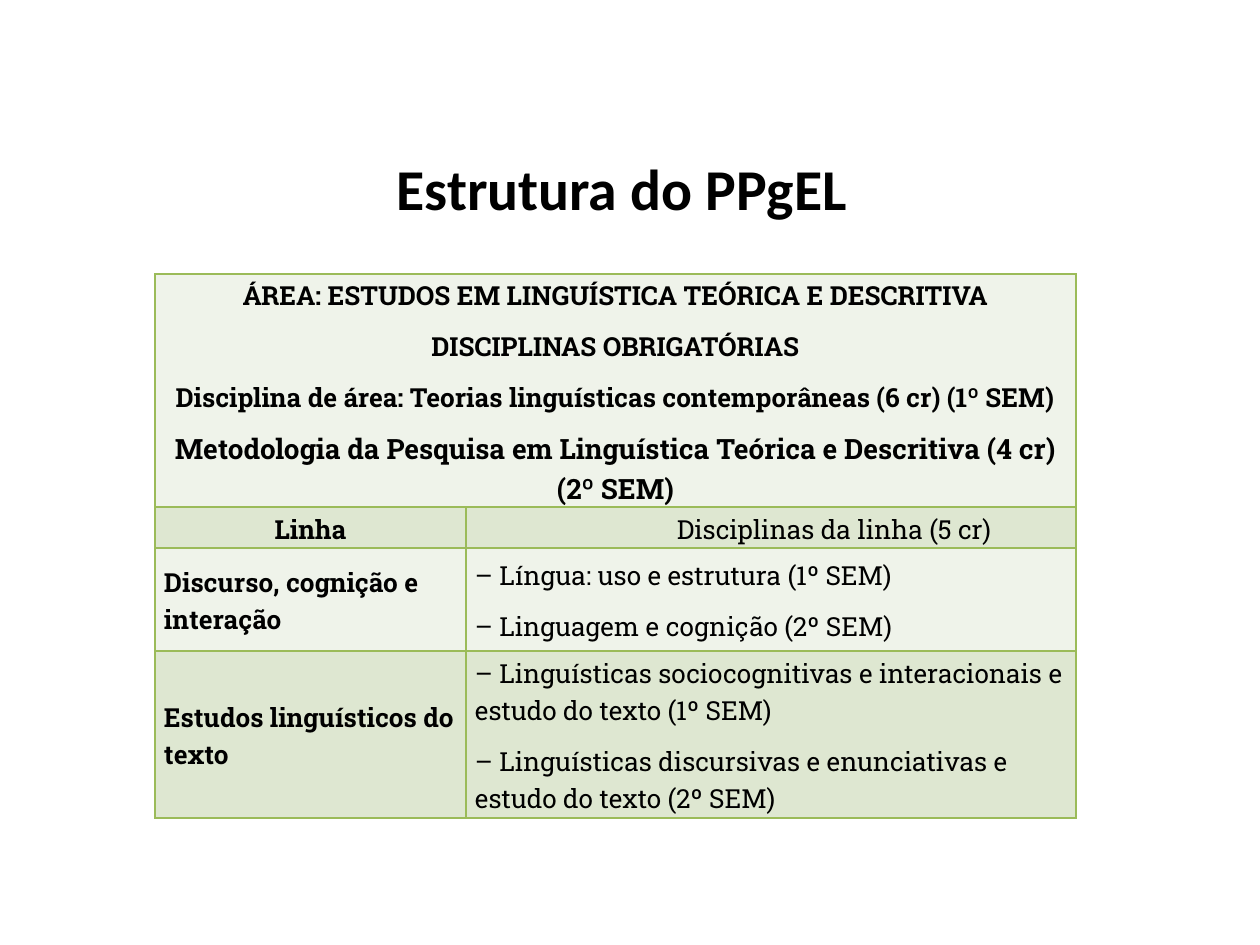
from dataclasses import dataclass

from lxml import etree
from pptx import Presentation
from pptx import util as u
from pptx.dml.color import RGBColor
from pptx.enum import text as t
from pptx.oxml.ns import qn

SCALE = 914400 / 126


@dataclass(frozen=True)
class Theme:
    ink: str = "000000"
    line: str = "9BBB59"
    light: str = "EFF3EA"
    dark: str = "DEE7D1"
    head: str = "Calibri"
    body: str = "Roboto Slab"
    title: int = 33
    text: int = 15
    large: int = 16


@dataclass(frozen=True)
class Para:
    text: str
    bold: bool = False
    center: bool = False
    size: int = Theme.text
    indent: int = 0


@dataclass(frozen=True)
class Row:
    height: int
    fill: str
    cells: tuple[tuple[Para, ...], ...]


THEME = Theme()
COLS = (311, 610)
ROWS = (
    Row(233, THEME.light, ((
        Para("ÁREA: ESTUDOS EM LINGUÍSTICA TEÓRICA E DESCRITIVA", True, True),
        Para("DISCIPLINAS OBRIGATÓRIAS", True, True),
        Para("Disciplina de área: Teorias linguísticas contemporâneas (6 cr) (1º SEM)", True, True),
        Para("Metodologia da Pesquisa em Linguística Teórica e Descritiva (4 cr) (2º SEM)",
             True, True, THEME.large),
    ), ())),
    Row(41, THEME.dark, (
        (Para("Linha", True, True),),
        (Para("Disciplinas da linha (5 cr)", indent=202),),
    )),
    Row(103, THEME.light, (
        (Para("Discurso, cognição e interação", True),),
        (Para("– Língua: uso e estrutura (1º SEM)"),
         Para("– Linguagem e cognição (2º SEM)")),
    )),
    Row(167, THEME.dark, (
        (Para("Estudos linguísticos do texto", True),),
        (Para("– Linguísticas sociocognitivas e interacionais e estudo do texto (1º SEM)"),
         Para("– Linguísticas discursivas e enunciativas e estudo do texto (2º SEM)")),
    )),
)


def px(n: int) -> int:
    return u.Emu(round(n * SCALE))


def style(par, face: str, size: int, bold: bool) -> None:
    font = par.font
    font.name, font.size, font.bold = face, u.Pt(size), bold
    font.color.rgb = RGBColor.from_string(THEME.ink)


def border(cell) -> None:
    props = cell._tc.get_or_add_tcPr()
    for side in ("lnL", "lnR", "lnT", "lnB"):
        line = etree.SubElement(props, qn(f"a:{side}"), w=str(u.Pt(1)))
        fill = etree.SubElement(line, qn("a:solidFill"))
        etree.SubElement(fill, qn("a:srgbClr"), val=THEME.line)


def write(frame, paras: tuple[Para, ...]) -> None:
    for i, item in enumerate(paras):
        par = frame.add_paragraph() if i else frame.paragraphs[0]
        par.text = item.text
        par.alignment = t.PP_ALIGN.CENTER if item.center else t.PP_ALIGN.LEFT
        par.line_spacing, par.space_after = 1.07, u.Pt(8)
        if item.indent:
            par._p.get_or_add_pPr().set("marL", str(px(item.indent)))
        style(par, THEME.body, item.size, item.bold)


def paint(cell, fill: str, paras: tuple[Para, ...]) -> None:
    border(cell)
    cell.fill.solid()
    cell.fill.fore_color.rgb = RGBColor.from_string(fill)
    cell.vertical_anchor = t.MSO_ANCHOR.MIDDLE
    cell.margin_left = cell.margin_right = px(9)
    cell.margin_top, cell.margin_bottom = px(1), 0
    write(cell.text_frame, paras)


def add_title(slide, words: str) -> None:
    title = slide.shapes.title
    title.left, title.top, title.width, title.height = map(px, (118, 141, 1008, 93))
    frame = title.text_frame
    frame.text = words
    frame.auto_size = t.MSO_AUTO_SIZE.NONE
    frame.vertical_anchor = t.MSO_ANCHOR.MIDDLE
    par = frame.paragraphs[0]
    par.alignment = t.PP_ALIGN.CENTER
    style(par, THEME.head, THEME.title, True)


def add_grid(slide, left: int, top: int) -> None:
    high = sum(row.height for row in ROWS)
    table = slide.shapes.add_table(
        len(ROWS), len(COLS), px(left), px(top), px(sum(COLS)), px(high)).table
    table.first_row = table.horz_banding = False
    for col, wide in zip(table.columns, COLS):
        col.width = px(wide)
    table.cell(0, 0).merge(table.cell(0, 1))
    for line, row in zip(table.rows, ROWS):
        line.height = px(row.height)
        for cell, paras in zip(line.cells, row.cells):
            paint(cell, row.fill, paras)


def main() -> None:
    deck = Presentation()
    deck.slide_width, deck.slide_height = px(1260), px(945)
    slide = deck.slides.add_slide(deck.slide_layouts[5])
    add_title(slide, "Estrutura do PPgEL")
    add_grid(slide, 155, 274)
    deck.save("out.pptx")


if __name__ == "__main__":
    main()
